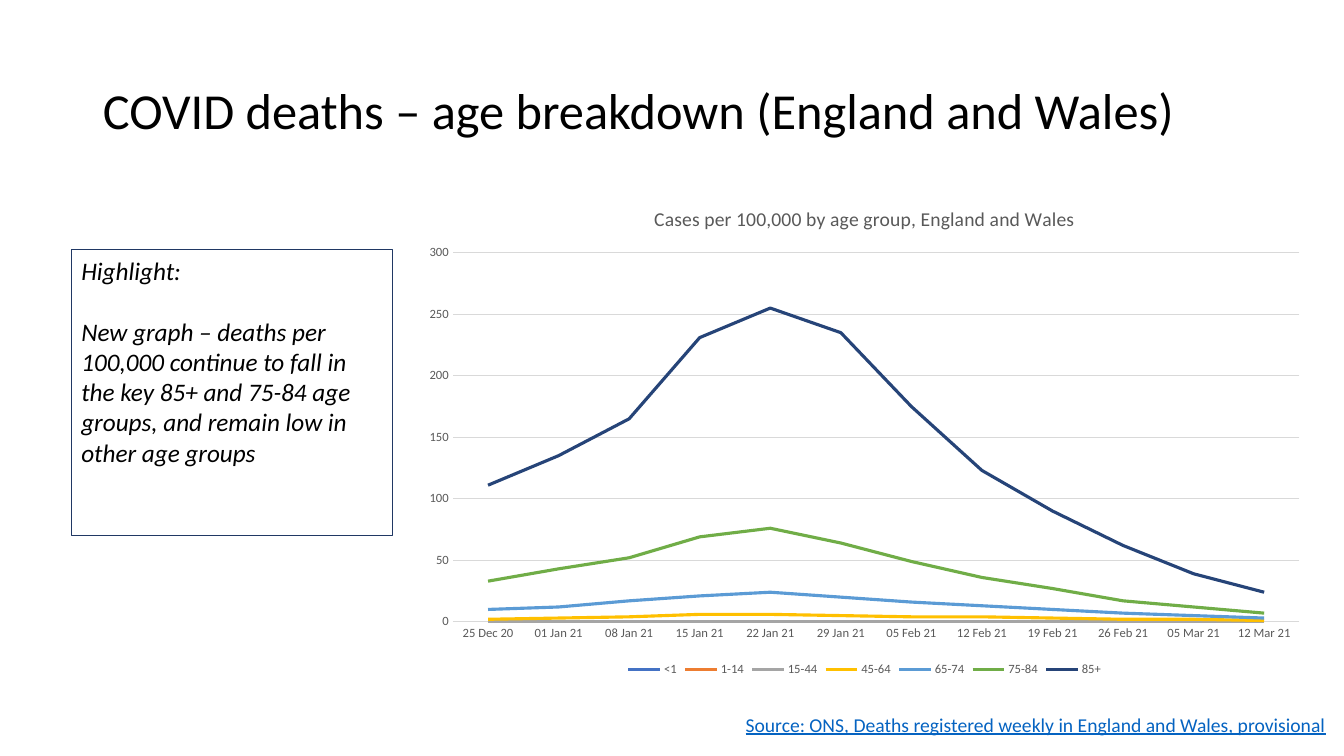
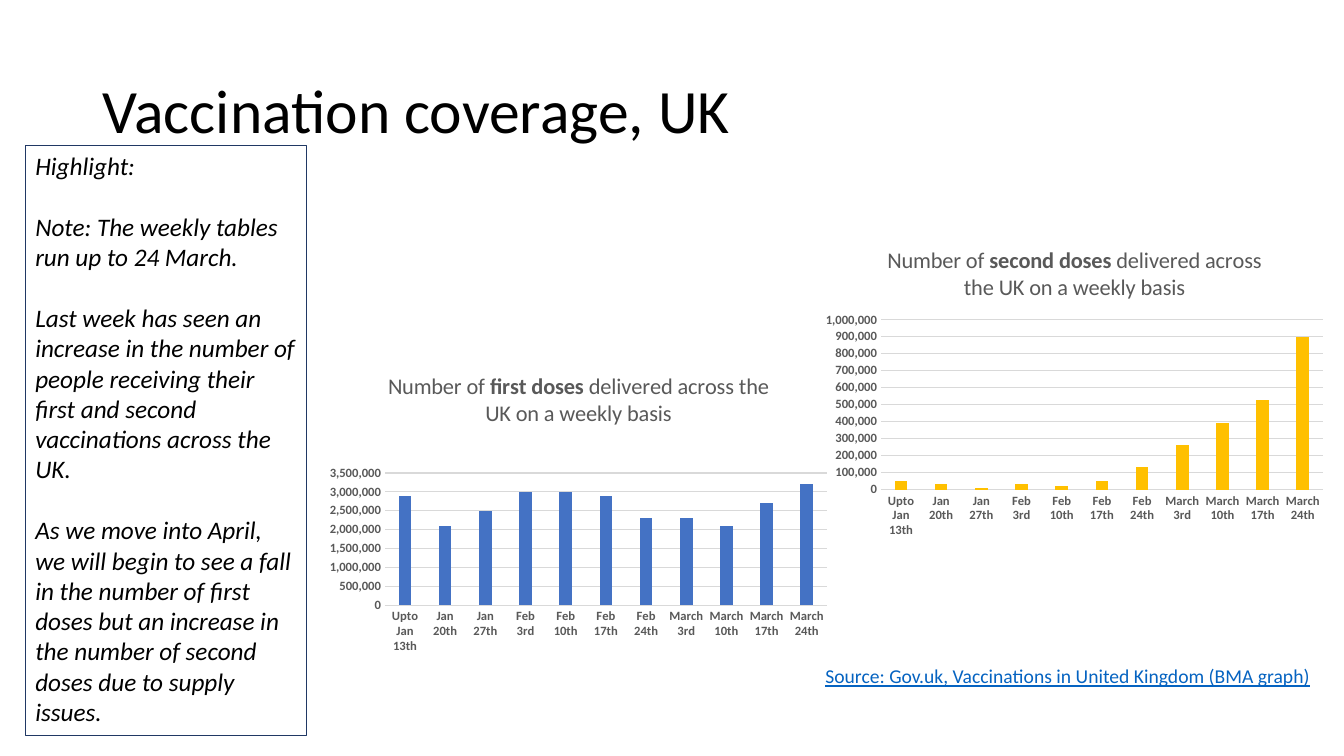
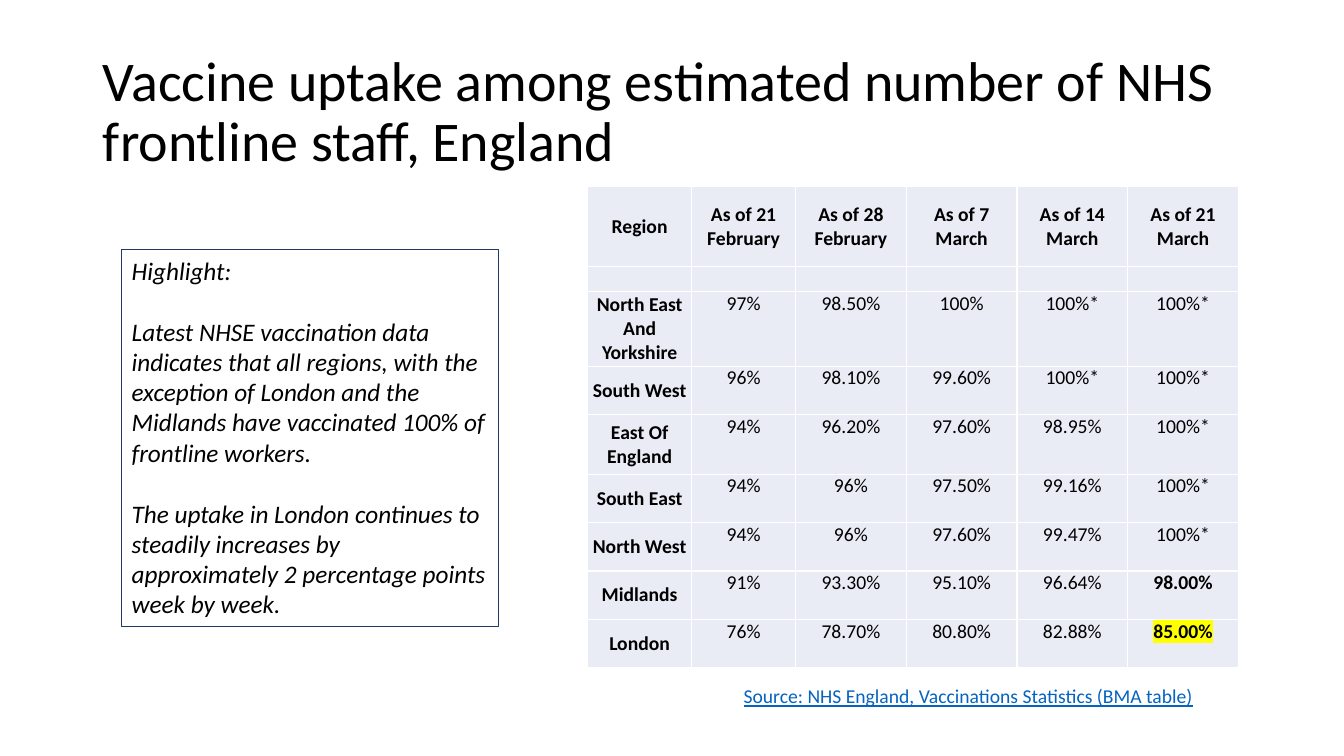
from lxml import etree
from pptx import Presentation
from pptx.chart.data import CategoryChartData
from pptx.dml.color import RGBColor
from pptx.enum.chart import XL_CHART_TYPE, XL_LEGEND_POSITION, XL_TICK_MARK
from pptx.enum.shapes import MSO_SHAPE
from pptx.enum.text import MSO_ANCHOR, MSO_AUTO_SIZE, PP_ALIGN
from pptx.oxml.ns import qn
from pptx.util import Cm, Pt

LINE = XL_CHART_TYPE.LINE
COLUMNS = XL_CHART_TYPE.COLUMN_CLUSTERED
LEGEND_BOTTOM = XL_LEGEND_POSITION.BOTTOM
NO_TICK = XL_TICK_MARK.NONE
RECTANGLE = MSO_SHAPE.RECTANGLE
TOP, MIDDLE = MSO_ANCHOR.TOP, MSO_ANCHOR.MIDDLE
LEFT, CENTER = PP_ALIGN.LEFT, PP_ALIGN.CENTER
NO_FIT = MSO_AUTO_SIZE.NONE

BLACK = RGBColor(0x00, 0x00, 0x00)
WHITE = RGBColor(0xFF, 0xFF, 0xFF)
NAVY = RGBColor(0x20, 0x38, 0x64)
SOURCE_BLUE = RGBColor(0x05, 0x63, 0xC1)
CHART_TEXT = RGBColor(0x59, 0x59, 0x59)
GRID = RGBColor(0xD9, 0xD9, 0xD9)
CELL = RGBColor(0xE9, 0xEB, 0xF5)
YELLOW = RGBColor(0xFF, 0xFF, 0x00)
BLUE = RGBColor(0x44, 0x72, 0xC4)
ORANGE = RGBColor(0xED, 0x7D, 0x31)
GREY = RGBColor(0xA5, 0xA5, 0xA5)
GOLD = RGBColor(0xFF, 0xC0, 0x00)
SKY = RGBColor(0x5B, 0x9B, 0xD5)
GREEN = RGBColor(0x70, 0xAD, 0x47)
DEEP_BLUE = RGBColor(0x26, 0x44, 0x78)


def lengths(box):
    return [Cm(value) for value in box]


class Deck:
    font_name = "Calibri"
    title_box = (2.34, 1.02, 29.21, 3.68)

    def __init__(self):
        self.presentation = Presentation()
        self.presentation.slide_width = Cm(33.87)
        self.presentation.slide_height = Cm(19.05)
        self.slide = None

    def style(self, font, size, color=BLACK, bold=False, italic=False, underline=False):
        font.name, font.size, font.color.rgb = self.font_name, Pt(size), color
        font.bold, font.italic, font.underline = bold, italic, underline

    def add_slide(self, title, size):
        self.slide = self.presentation.slides.add_slide(self.presentation.slide_layouts[5])
        shape = self.slide.shapes.title
        shape.left, shape.top, shape.width, shape.height = lengths(self.title_box)
        frame = shape.text_frame
        frame.text = title
        frame.auto_size, frame.vertical_anchor = NO_FIT, MIDDLE
        paragraph = frame.paragraphs[0]
        paragraph.alignment, paragraph.line_spacing = LEFT, 0.9
        self.style(paragraph.font, size)

    def highlight(self, box, texts):
        """Outlined note, with one line of space between its paragraphs."""
        shape = self.slide.shapes.add_shape(RECTANGLE, *lengths(box))
        shape.shadow.inherit = False
        shape.fill.background()
        shape.line.color.rgb, shape.line.width = NAVY, Pt(0.75)
        frame = shape.text_frame
        frame.word_wrap, frame.vertical_anchor = True, TOP
        frame.text = "\n".join(["Highlight:", *texts])
        for index, paragraph in enumerate(frame.paragraphs):
            paragraph.alignment = LEFT
            if index:
                paragraph.space_before = Pt(22)
            self.style(paragraph.font, 18, italic=True)

    def source(self, box, text, wrap=True):
        frame = self.slide.shapes.add_textbox(*lengths(box)).text_frame
        frame.word_wrap = wrap
        frame.text = text
        self.style(frame.paragraphs[0].font, 14, SOURCE_BLUE, underline=True)

    def chart(self, kind, box, plot_box, title, title_size, categories, series,
              maximum, step, number_format="General", bold_axes=False):
        """series holds (name, color, values); title holds (text, bold)."""
        data = CategoryChartData(number_format=number_format)
        data.categories = categories
        for name, _, values in series:
            data.add_series(name, values)
        chart = self.slide.shapes.add_chart(kind, *lengths(box), data).chart
        self.style(chart.font, 10)

        # Title
        chart.has_title = True
        paragraph = chart.chart_title.text_frame.paragraphs[0]
        for text, bold in title:
            run = paragraph.add_run()
            run.text = text
            self.style(run.font, title_size, CHART_TEXT, bold)
        chart.chart_title.include_in_layout = False

        # Axes
        for axis in (chart.category_axis, chart.value_axis):
            axis.major_tick_mark = axis.minor_tick_mark = NO_TICK
            self.style(axis.tick_labels.font, 9, CHART_TEXT, bold_axes)
        chart.category_axis.format.line.color.rgb = GRID
        chart.category_axis.format.line.width = Pt(0.75)
        values_axis = chart.value_axis
        values_axis.minimum_scale, values_axis.maximum_scale = 0, maximum
        values_axis.major_unit = step
        values_axis.format.line.fill.background()
        values_axis.has_major_gridlines = True
        values_axis.major_gridlines.format.line.color.rgb = GRID
        values_axis.major_gridlines.format.line.width = Pt(0.75)
        values_axis.tick_labels.number_format = number_format
        values_axis.tick_labels.number_format_is_linked = False

        # Series
        plot = chart.plots[0]
        plot.vary_by_categories = False
        for item, (_, color, _) in zip(plot.series, series):
            if kind == LINE:
                item.smooth = False
                item.format.line.color.rgb, item.format.line.width = color, Pt(2.25)
            else:
                item.format.fill.solid()
                item.format.fill.fore_color.rgb = color
        if kind == COLUMNS:
            plot.gap_width, plot.overlap = 219, -27

        chart.has_legend = len(series) > 1
        if chart.has_legend:
            chart.legend.position, chart.legend.include_in_layout = LEGEND_BOTTOM, False
            self.style(chart.legend.font, 9, CHART_TEXT)
        self.place_plot(chart, box, plot_box)

    def place_plot(self, chart, box, plot_box):
        """Fix the inner plot area, given in slide coordinates."""
        plot_area = chart._chartSpace.find(".//" + qn("c:plotArea"))
        for old in plot_area.findall(qn("c:layout")):
            plot_area.remove(old)
        layout = etree.Element(qn("c:layout"))
        plot_area.insert(0, layout)
        manual = etree.SubElement(layout, qn("c:manualLayout"))
        left, top, width, height = box
        settings = {
            "layoutTarget": "inner", "xMode": "edge", "yMode": "edge",
            "x": (plot_box[0] - left) / width, "y": (plot_box[1] - top) / height,
            "w": plot_box[2] / width, "h": plot_box[3] / height,
        }
        for tag, value in settings.items():
            etree.SubElement(manual, qn("c:" + tag), val=str(value))

    def table(self, box, widths, heights, rows, bold_cells, marked_cell):
        table = self.slide.shapes.add_table(len(rows), len(widths), *lengths(box)).table
        table.first_row = table.horz_banding = False
        for column, width in zip(table.columns, widths):
            column.width = Cm(width)
        for row, height in zip(table.rows, heights):
            row.height = Cm(height)
        for i, texts in enumerate(rows):
            for j, text in enumerate(texts):
                cell = table.cell(i, j)
                heading = i == 0 or j == 0
                cell.margin_left = cell.margin_right = cell.margin_top = cell.margin_bottom = 0
                cell.vertical_anchor = MIDDLE if heading else TOP
                cell.fill.solid()
                cell.fill.fore_color.rgb = CELL
                self.cell_borders(cell)
                paragraph = cell.text_frame.paragraphs[0]
                paragraph.alignment = CENTER
                if not text:
                    etree.SubElement(paragraph._p, qn("a:endParaRPr"), sz="1000")
                    continue
                run = paragraph.add_run()
                run.text = text
                self.style(paragraph.font, 14, bold=heading or (i, j) in bold_cells)
                if (i, j) == marked_cell:
                    mark = etree.SubElement(run._r.get_or_add_rPr(), qn("a:highlight"))
                    etree.SubElement(mark, qn("a:srgbClr"), val=str(YELLOW))

    def cell_borders(self, cell):
        properties = cell._tc.get_or_add_tcPr()
        for index, side in enumerate(("lnL", "lnR", "lnT", "lnB")):
            line = etree.Element(qn("a:" + side), w=str(Pt(1)))
            fill = etree.SubElement(line, qn("a:solidFill"))
            etree.SubElement(fill, qn("a:srgbClr"), val=str(WHITE))
            properties.insert(index, line)


def main():
    deck = Deck()

    # Deaths by age
    deck.add_slide("COVID deaths – age breakdown (England and Wales)", 36)
    deck.highlight((1.8, 6.3, 8.1, 7.19), [
        "New graph – deaths per 100,000 continue to fall in the key 85+ and 75-84 "
        "age groups, and remain low in other age groups"])
    deck.source((18.54, 17.83, 15.29, 0.86),
                "Source: ONS, Deaths registered weekly in England and Wales, provisional",
                wrap=False)
    weeks = ["25 Dec 20", "01 Jan 21", "08 Jan 21", "15 Jan 21", "22 Jan 21", "29 Jan 21",
             "05 Feb 21", "12 Feb 21", "19 Feb 21", "26 Feb 21", "05 Mar 21", "12 Mar 21"]
    none = [0] * len(weeks)
    age_groups = [
        ("<1", BLUE, none),
        ("1-14", ORANGE, none),
        ("15-44", GREY, none),
        ("45-64", GOLD, [2, 3, 4, 6, 6, 5, 4, 4, 3, 2, 2, 1]),
        ("65-74", SKY, [10, 12, 17, 21, 24, 20, 16, 13, 10, 7, 5, 3]),
        ("75-84", GREEN, [33, 43, 52, 69, 76, 64, 49, 36, 27, 17, 12, 7]),
        ("85+", DEEP_BLUE, [111, 135, 165, 231, 255, 235, 175, 123, 90, 62, 39, 24]),
    ]
    deck.chart(LINE, (10.36, 4.7, 22.86, 12.45), (11.41, 6.37, 21.34, 9.3),
               [("Cases per 100,000 by age group, England and Wales", False)], 14,
               weeks, age_groups, 300, 50)

    # Vaccination coverage
    deck.add_slide("Vaccination coverage, UK", 44)
    deck.highlight((0.64, 3.66, 7.09, 14.88), [
        "Note: The weekly tables run up to 24 March.",
        "Last week has seen an increase in the number of people receiving their first "
        "and second vaccinations across the UK.",
        "As we move into April, we will begin to see a fall in the number of first doses "
        "but an increase in the number of second doses due to supply issues."])
    deck.source((20.55, 16.61, 13.06, 0.86),
                "Source: Gov.uk, Vaccinations in United Kingdom (BMA graph)")
    weeks = ["Upto Jan 13th", "Jan 20th", "Jan 27th", "Feb 3rd", "Feb 10th", "Feb 17th",
             "Feb 24th", "March 3rd", "March 10th", "March 17th", "March 24th"]
    doses = [
        ("first doses", BLUE, (8.05, 8.99, 13.06, 7.62), (9.7, 11.92, 11.14, 3.33),
         [2900000, 2100000, 2500000, 3000000, 3000000, 2900000,
          2300000, 2300000, 2100000, 2700000, 3200000], 3500000, 500000),
        ("second doses", GOLD, (20.55, 5.82, 13.06, 7.92), (22.2, 8.06, 11.14, 4.28),
         [50000, 30000, 10000, 30000, 20000, 50000,
          130000, 260000, 390000, 530000, 900000], 1000000, 100000),
    ]
    for dose, color, box, plot_box, values, maximum, step in doses:
        title = [("Number of ", False), (dose, True),
                 (" delivered across the UK on a weekly basis", False)]
        deck.chart(COLUMNS, box, plot_box, title, 16, weeks, [("Series 1", color, values)],
                   maximum, step, "#,##0", bold_axes=True)

    # Uptake among frontline staff
    deck.add_slide("Vaccine uptake among estimated number of NHS frontline staff, England", 40)
    deck.highlight((3.07, 6.3, 9.5, 9.5), [
        "Latest NHSE vaccination data indicates that all regions, with the exception of "
        "London and the Midlands have vaccinated 100% of frontline workers.",
        "The uptake in London continues to steadily increases by approximately "
        "2 percentage points week by week."])
    uptake = [
        ["Region", "As of 21 February", "As of 28 February", "As of 7 March",
         "As of 14 March", "As of 21 March"],
        [""] * 6,
        ["North East And Yorkshire", "97%", "98.50%", "100%", "100%*", "100%*"],
        ["South West", "96%", "98.10%", "99.60%", "100%*", "100%*"],
        ["East Of England", "94%", "96.20%", "97.60%", "98.95%", "100%*"],
        ["South East", "94%", "96%", "97.50%", "99.16%", "100%*"],
        ["North West", "94%", "96%", "97.60%", "99.47%", "100%*"],
        ["Midlands", "91%", "93.30%", "95.10%", "96.64%", "98.00%"],
        ["London", "76%", "78.70%", "80.80%", "82.88%", "85.00%"],
    ]
    deck.table((14.81, 4.7, 16.4, 12.13), [2.62] * 2 + [2.79] * 4,
               [2.01, 0.64, 1.88, 1.22, 1.5] + [1.22] * 4, uptake,
               bold_cells={(7, 5), (8, 5)}, marked_cell=(8, 5))
    deck.source((18.49, 17.12, 13.06, 0.86),
                "Source: NHS England, Vaccinations Statistics (BMA table)")

    deck.presentation.save("out.pptx")


if __name__ == "__main__":
    main()
